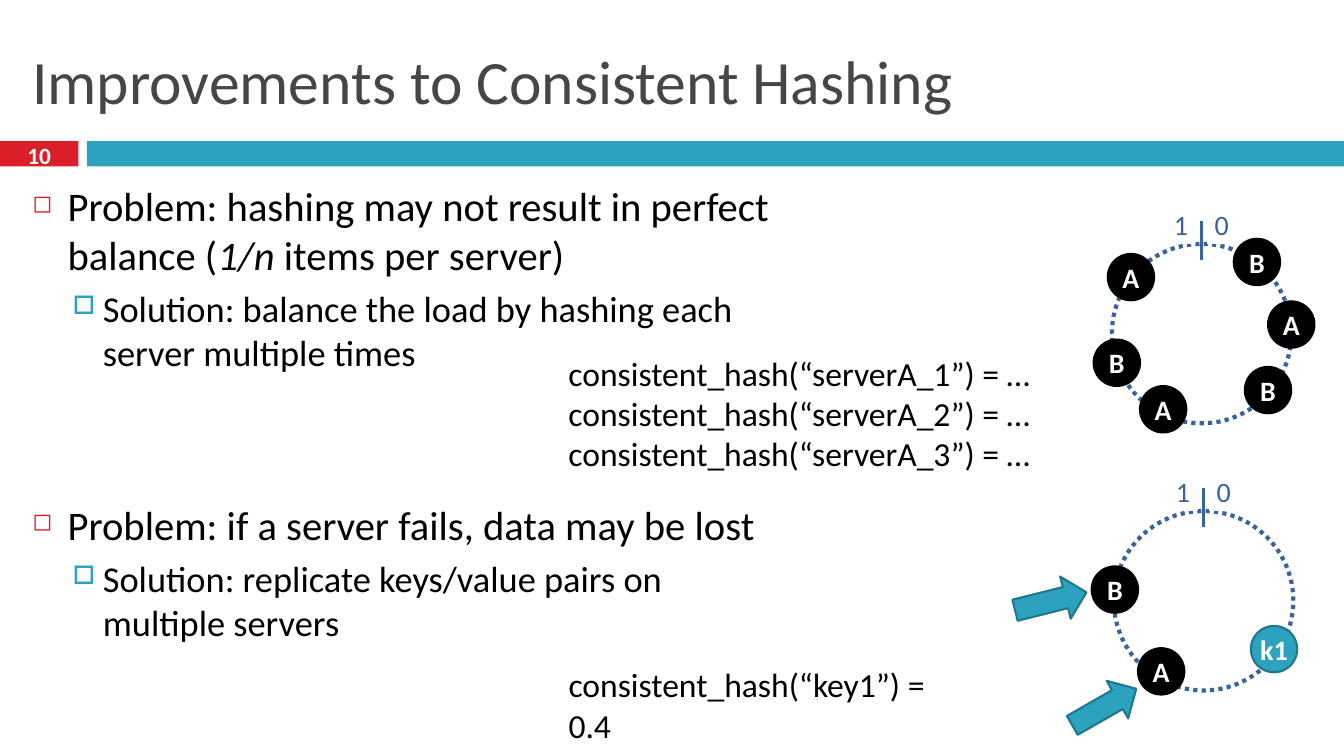
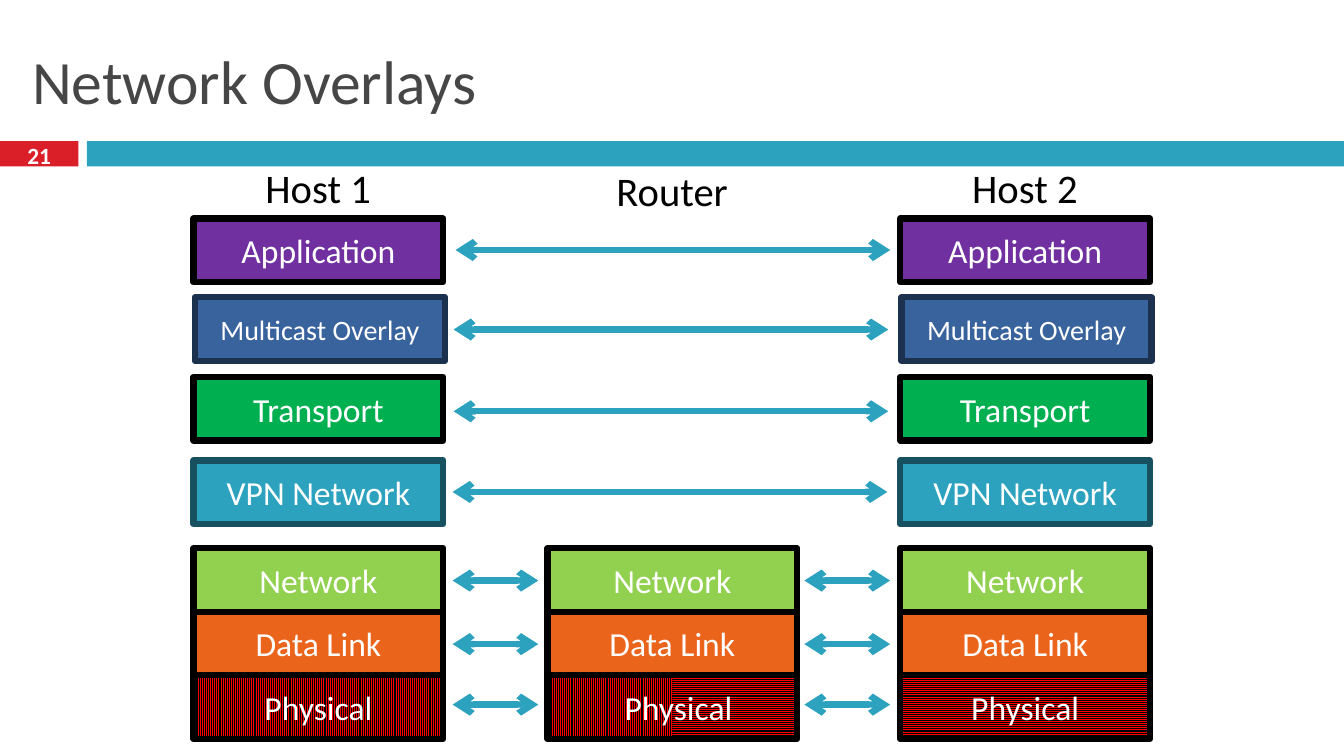
"""Build two lecture slides on consistent hashing and network overlays."""
import dataclasses
import typing

import lxml.etree
import pptx
import pptx.dml.color
import pptx.enum.dml
import pptx.enum.shapes
import pptx.enum.text
import pptx.oxml.ns
import pptx.util

Pt = pptx.util.Pt
KIND = pptx.enum.shapes.MSO_SHAPE
ALIGN = pptx.enum.text.PP_ALIGN
ANCHOR = pptx.enum.text.MSO_ANCHOR
GRAIN = pptx.enum.dml.MSO_PATTERN_TYPE
Box = tuple[float, float, float, float]

HUES = {
    "red": "DA1F28", "teal": "2DA2BF", "edge": "21788D", "deep": "175160",
    "blue": "39639D", "navy": "1C314E", "gray": "464646", "black": "000000",
    "white": "FFFFFF", "plum": "7030A0", "green": "00B050", "lime": "92D050",
    "rust": "EB641B", "fire": "FF0000",
}
FRAME = {"word_wrap": True, "vertical_anchor": ANCHOR.MIDDLE}
TIGHT = {f"margin_{side}": 0 for side in ("left", "right", "top", "bottom")}
TOP = {"vertical_anchor": ANCHOR.TOP}
WIDE, HIGH = 960, 540
CELL_W, CELL_H = 178.5, 45.4
DOT, RING = 33.1, 128.2


@dataclasses.dataclass
class Mark:
    sign: str
    hue: str
    size: int
    left: float
    hang: float


@dataclasses.dataclass
class Line:
    runs: list[tuple[str, bool]]
    size: float
    hue: str = "black"
    bold: bool = False
    align: typing.Any = ALIGN.LEFT
    gap: float = 0
    mark: Mark | None = None


@dataclasses.dataclass
class Node:
    name: str
    left: float
    top: float
    fill: str = "black"
    edge: str = "black"


@dataclasses.dataclass
class Layer:
    name: str
    top: float
    fill: str
    mid: float
    start: float = 323.3
    edge: str = "black"
    size: int = 24
    shift: float = 0
    route: bool = False


MAIN = Mark("◻", "red", 60, 25.2, 25.2)
SUB = Mark("□", "teal", 70, 50.4, 21.6)

RINGS = [(794.2, 174.2), (795.6, 365)]
NODES = [
    Node("A", 905.8, 215.3), Node("B", 881.3, 170.6), Node("A", 814.3, 275.8),
    Node("A", 791.3, 181.4), Node("B", 889.2, 262.1), Node("B", 781.2, 242.6),
    Node("B", 779.8, 404.6), Node("A", 812.9, 463),
    Node("k1", 893.5, 447.1, "teal", "edge"),
]
HINTS = [(762.5, 489.6, 330.2), (724.3, 414, 345.9)]
HOSTS = [(138.2, "Host 1", 113), (391, "Router", 115.2), (643, "Host 2", 113)]
LAYERS = [
    Layer("Application", 156.2, "plum", 178.6, 325.4),
    Layer("Multicast Overlay", 212.4, "blue", 235.4, 324, "navy", 20, 1),
    Layer("Transport", 269.3, "green", 293.8, 324),
    Layer("VPN Network", 329, "teal", 351.4, edge="deep"),
    Layer("Network", 391.7, "lime", 414.7, route=True),
    Layer("Data Link", 437, "rust", 460.1, route=True),
    Layer("Physical", 482.4, "", 503.3, route=True),
]


def tint(name: str) -> pptx.dml.color.RGBColor:
    return pptx.dml.color.RGBColor.from_string(HUES[name])


def apply(item: typing.Any, form: dict[str, typing.Any]) -> None:
    for key, val in form.items():
        setattr(item, key, val)


def add_mark(par: typing.Any, mark: Mark) -> None:
    props = par._p.get_or_add_pPr()
    props.set("marL", str(Pt(mark.left)))
    props.set("indent", str(-Pt(mark.hang)))
    tag = pptx.oxml.ns.qn
    hue = lxml.etree.SubElement(props, tag("a:buClr"))
    lxml.etree.SubElement(hue, tag("a:srgbClr"), val=HUES[mark.hue])
    lxml.etree.SubElement(props, tag("a:buSzPct"), val=str(mark.size * 1000))
    lxml.etree.SubElement(props, tag("a:buChar"), char=mark.sign)


def write(shape: typing.Any, lines: list[Line], **form: typing.Any) -> None:
    frame = shape.text_frame
    apply(frame, FRAME | form)
    for num, line in enumerate(lines):
        par = frame.add_paragraph() if num else frame.paragraphs[0]
        apply(par, {"alignment": line.align, "space_before": Pt(line.gap)})
        if line.mark:
            add_mark(par, line.mark)
        for words, slant in line.runs:
            run = par.add_run()
            run.text = words
            apply(run.font, {"name": "Calibri", "size": Pt(line.size),
                             "bold": line.bold, "italic": slant})
            run.font.color.rgb = tint(line.hue)


def label(words: str, size: float, hue: str = "white", **form: typing.Any) -> Line:
    return Line([(words, False)], size, hue, align=ALIGN.CENTER, **form)


def add_text(slide: typing.Any, box: Box, lines: list[Line], **form: typing.Any) -> None:
    write(slide.shapes.add_textbox(*map(Pt, box)), lines, **form)


def add_box(slide: typing.Any, box: Box, fill: str = "", edge: str = "",
            width: float = 1.5, kind: typing.Any = KIND.RECTANGLE) -> typing.Any:
    shape = slide.shapes.add_shape(kind, *map(Pt, box))
    shape.shadow.inherit = False
    if fill:
        shape.fill.solid()
        shape.fill.fore_color.rgb = tint(fill)
    else:
        shape.fill.background()
    if edge:
        shape.line.color.rgb = tint(edge)
        shape.line.width = Pt(width)
    else:
        shape.line.fill.background()
    return shape


def hatch(shape: typing.Any, grain: typing.Any) -> None:
    shape.fill.patterned()
    shape.fill.pattern = grain
    shape.fill.fore_color.rgb = tint("black")
    shape.fill.back_color.rgb = tint("fire")


def add_line(slide: typing.Any, start: tuple[float, float], end: tuple[float, float],
             hue: str, width: float, heads: bool = False) -> None:
    line = slide.shapes.add_connector(
        pptx.enum.shapes.MSO_CONNECTOR.STRAIGHT, *map(Pt, start + end))
    line.line.color.rgb = tint(hue)
    line.line.width = Pt(width)
    tag = pptx.oxml.ns.qn
    props = line._element.spPr
    if heads:
        for tip in ("a:headEnd", "a:tailEnd"):
            lxml.etree.SubElement(props.find(tag("a:ln")), tag(tip), type="arrow")
    lxml.etree.SubElement(props, tag("a:effectLst"))


def add_slide(deck: typing.Any, title: str, num: str) -> typing.Any:
    slide = deck.slides.add_slide(deck.slide_layouts[6])
    add_box(slide, (0, 100.8, 56, 18), "red")
    add_box(slide, (62, 100.8, WIDE - 62, 18), "teal")
    add_text(slide, (16, 18, 928, 78), [Line([(title, False)], 44, "gray")])
    add_text(slide, (0, 98.6, 56, 24), [label(num, 16.6, bold=True)])
    return slide


def add_ring(slide: typing.Any, left: float, top: float) -> None:
    ring = add_box(slide, (left, top, RING, RING), "", "blue", 3, KIND.OVAL)
    ring.line.dash_style = pptx.enum.dml.MSO_LINE.ROUND_DOT
    for digit, step in (("1", 38.9), ("0", 68)):
        box = add_box(slide, (left + step, top - 28, 21, 28), "white")
        write(box, [label(digit, 20, "blue")], **TIGHT)
    mid = left + RING / 2
    add_line(slide, (mid, top - 16.6), (mid, top + 11.4), "blue", 2.25)


def add_node(slide: typing.Any, node: Node) -> None:
    dot = add_box(slide, (node.left, node.top, DOT, DOT), node.fill, node.edge,
                  kind=KIND.OVAL)
    write(dot, [label(node.name, 20, bold=True)], **TIGHT | {"word_wrap": False})


def add_point(slide: typing.Any, top: float, runs: list[tuple[str, bool]],
              reply: str) -> None:
    add_text(slide, (16, top, 542, 150),
             [Line(runs, 29, gap=7, mark=MAIN),
              Line([(reply, False)], 26, gap=5.5, mark=SUB)], **TOP)


def add_code(slide: typing.Any, box: Box, rows: list[str]) -> None:
    add_text(slide, box, [Line([(row, False)], 24) for row in rows], **TOP)


def draw_hash(deck: typing.Any) -> None:
    slide = add_slide(deck, "Improvements to Consistent Hashing", "10")
    add_point(slide, 126,
              [("Problem: hashing may not result in perfect balance (", False),
               ("1/n", True), (" items per server)", False)],
              "Solution: balance the load by hashing each server multiple times")
    add_point(slide, 353.5, [("Problem: if a server fails, data may be lost", False)],
              "Solution: replicate keys/value pairs on multiple servers")
    add_code(slide, (399, 248.4, 352, 94),
             [f"consistent_hash(“serverA_{num}”) = …" for num in (1, 2, 3)])
    add_code(slide, (399, 471, 298.8, 36), ["consistent_hash(“key1”) = 0.4"])
    for left, top in RINGS:
        add_ring(slide, left, top)
    for node in NODES:
        add_node(slide, node)
    for left, top, turn in HINTS:
        hint = add_box(slide, (left, top, 52.6, 31), "teal", "edge",
                       kind=KIND.RIGHT_ARROW)
        hint.rotation = turn


def add_cell(slide: typing.Any, layer: Layer, left: float, host: str) -> None:
    box = (left + layer.shift, layer.top, CELL_W, CELL_H)
    form = {}
    split = not layer.fill and host == "Router"
    if split:
        half = CELL_W / 2
        for num, grain in enumerate((GRAIN.LIGHT_VERTICAL, GRAIN.LIGHT_HORIZONTAL)):
            hatch(add_box(slide, (left + num * half, layer.top, half, CELL_H)), grain)
        form = {"margin_left": Pt(15.8)}
    cell = add_box(slide, box, layer.fill, layer.edge, 4.5)
    if not layer.fill and not split:
        hatch(cell, GRAIN.LIGHT_VERTICAL if host == "Host 1" else GRAIN.LIGHT_HORIZONTAL)
    write(cell, [label(layer.name, layer.size)], **form)


def draw_stack(deck: typing.Any) -> None:
    slide = add_slide(deck, "Network Overlays", "21")
    for left, host, top in HOSTS:
        add_text(slide, (left + 33, top, 112.3, 42.5),
                 [label(host, 29, "black", gap=7)], **TOP)
        for layer in LAYERS:
            if layer.route or host != "Router":
                add_cell(slide, layer, left, host)
    for layer in LAYERS:
        spans = [(323.3, 61.2), (574.6, 61.2)] if layer.route else [(layer.start, 310.5)]
        for start, reach in spans:
            add_line(slide, (start, layer.mid), (start + reach, layer.mid),
                     "teal", 4.5, True)


def main() -> None:
    deck = pptx.Presentation()
    apply(deck, {"slide_width": Pt(WIDE), "slide_height": Pt(HIGH)})
    draw_hash(deck)
    draw_stack(deck)
    deck.save("out.pptx")


if __name__ == "__main__":
    main()
